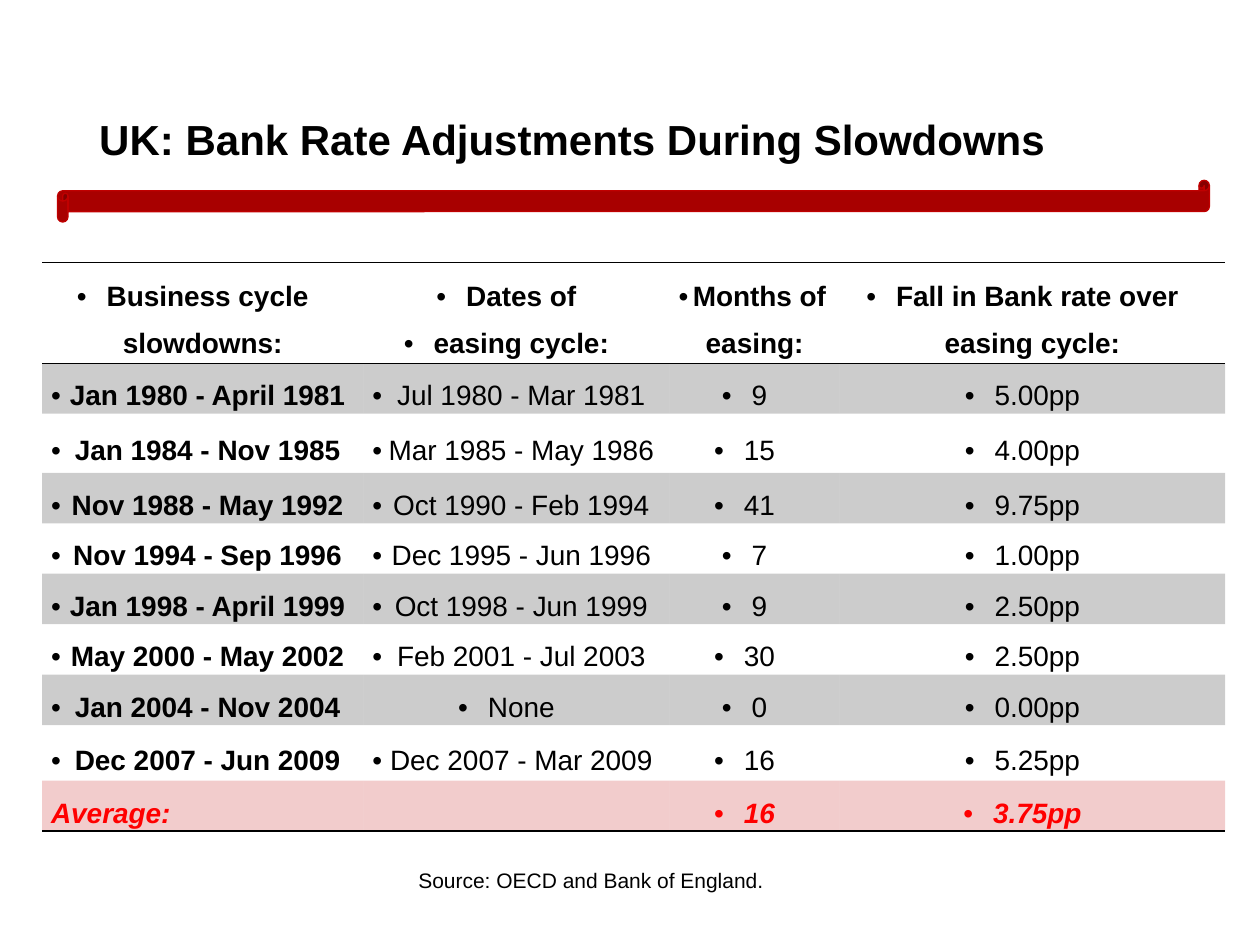
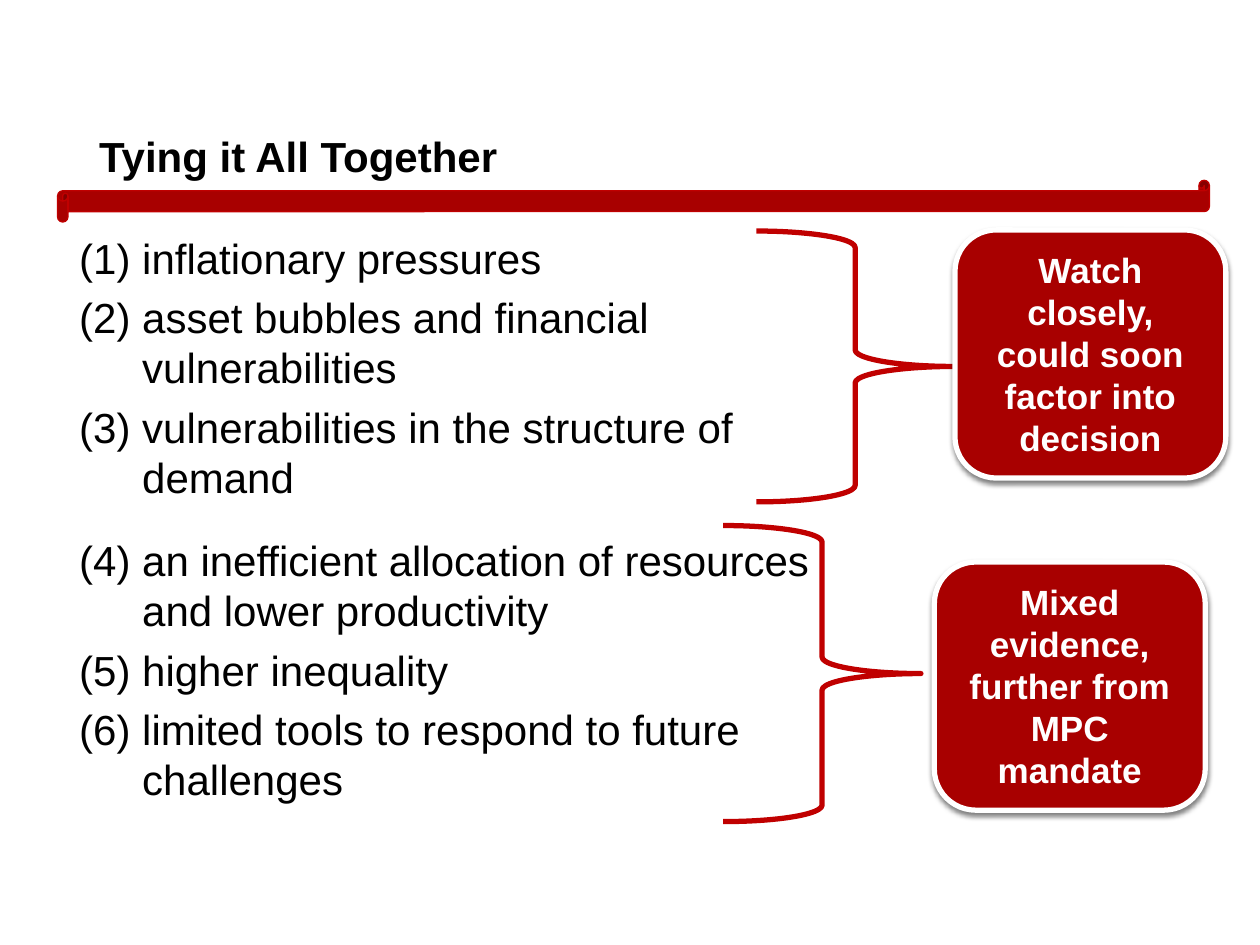
"""Build two slides on UK Bank Rate easing cycles and the policy outlook."""
import lxml.etree
import pptx
import pptx.dml.color
import pptx.enum.shapes
import pptx.enum.text
import pptx.oxml.ns
import pptx.util

Pt = pptx.util.Pt
Shape = pptx.enum.shapes.MSO_SHAPE
Anchor = pptx.enum.text.MSO_ANCHOR
Align = pptx.enum.text.PP_ALIGN

RATE_TITLE = "UK: Bank Rate Adjustments During Slowdowns"
RATE_SOURCE = "Source: OECD and Bank of England."
RATE_HEADER = ("Business cycle slowdowns:", "Dates of\neasing cycle:",
               "Months of easing:", "Fall in Bank rate over easing cycle:")
RATE_CYCLES = [
    ("Jan 1980 - April 1981", "Jul 1980 - Mar 1981", "9", "5.00pp"),
    ("Jan 1984 - Nov 1985", "Mar 1985 - May 1986", "15", "4.00pp"),
    ("Nov 1988 - May 1992", "Oct 1990 - Feb 1994", "41", "9.75pp"),
    ("Nov 1994 - Sep 1996", "Dec 1995 - Jun 1996", "7", "1.00pp"),
    ("Jan 1998 - April 1999", "Oct 1998 - Jun 1999", "9", "2.50pp"),
    ("May 2000 - May 2002", "Feb 2001 - Jul 2003", "30", "2.50pp"),
    ("Jan 2004 - Nov 2004", "None", "0", "0.00pp"),
    ("Dec 2007 - Jun 2009", "Dec 2007 - Mar 2009", "16", "5.25pp"),
]
RATE_AVERAGE = ("Average:", "", "16", "3.75pp")
COLUMN_WIDTHS = (183.6, 175, 97.2, 220.3)
ROW_HEIGHT = 28.85
TALLER_ROWS = {0: 57.7, 2: 33.8, 8: 31.8}

RISKS_TITLE = "Tying it All Together"
RISK_GROUPS = [
    ["inflationary pressures", "asset bubbles and financial vulnerabilities",
     "vulnerabilities in the structure of demand"],
    ["an inefficient allocation of resources and lower productivity",
     "higher inequality", "limited tools to respond to future challenges"],
]
BRACES = [(432.2, 132, 113, 154.8), (413.3, 300.3, 113, 169.2)]
VERDICTS = [
    ("Mixed evidence, further from MPC mandate", 533.9, 321.2),
    ("Watch closely, could soon factor into decision", 545.7, 131.4),
]
VERDICT_SIZE = (154.8, 141.8)

THEME = {
    "font": "Arial", "text": "000000", "light": "FFFFFF", "band": "A80000",
    "accent": "C00000", "average": "FF0000", "tint": 20,
    "title_size": 24, "body_size": 24, "verdict_size": 20,
    "table_size": 16, "source_size": 12,
}
PLAIN_TABLE_STYLE = "{2D5ABB26-0587-4C30-8999-92F81FD0307C}"


def color(name):
    return pptx.dml.color.RGBColor.from_string(THEME[name])


def add_element(parent, tag, **attributes):
    element = lxml.etree.SubElement(parent, pptx.oxml.ns.qn(tag))
    for key, value in attributes.items():
        element.set(key, str(value))
    return element


def write_text(frame, text, size, ink="text", bold=False, italic=False,
               align=Align.LEFT, line_spacing=None, space_before=0,
               group_space=0, bullet=None, margin=0, indent=0):
    """Write paragraphs split at line breaks, with groups split at blank lines."""
    frame.word_wrap = True
    lines = [(line, group > 0 and index == 0)
             for group, block in enumerate(text.split("\n\n"))
             for index, line in enumerate(block.split("\n"))]
    for position, (line, opens_group) in enumerate(lines):
        paragraph = frame.add_paragraph() if position else frame.paragraphs[0]
        properties = paragraph._p.get_or_add_pPr()
        properties.set("marL", str(Pt(margin)))
        properties.set("indent", str(Pt(indent)))
        if bullet == "number":
            add_element(properties, "a:buAutoNum", type="arabicParenBoth")
        elif bullet:
            add_element(properties, "a:buFont", typeface=THEME["font"])
            add_element(properties, "a:buChar", char=bullet)
        paragraph.alignment = align
        if line_spacing:
            paragraph.line_spacing = line_spacing
        if position:
            paragraph.space_before = Pt(group_space if opens_group else space_before)
        run = paragraph.add_run()
        run.text = line
        run.font.name = THEME["font"]
        run.font.size = Pt(THEME[size])
        run.font.bold = bold
        run.font.italic = italic
        run.font.color.rgb = color(ink)


def add_text(slide, place, text, size, anchor=Anchor.TOP, **text_format):
    box = slide.shapes.add_textbox(*map(Pt, place))
    box.text_frame.vertical_anchor = anchor
    write_text(box.text_frame, text, size, **text_format)


def add_shape(slide, kind, place, line, line_width, fill=None):
    shape = slide.shapes.add_shape(kind, *map(Pt, place))
    shape.shadow.inherit = False
    if fill:
        shape.fill.solid()
        shape.fill.fore_color.rgb = color(fill)
    else:
        shape.fill.background()
    shape.line.color.rgb = color(line)
    shape.line.width = Pt(line_width)
    return shape


def add_titled_slide(presentation, title, title_place):
    slide = presentation.slides.add_slide(presentation.slide_layouts[6])
    scroll = add_shape(slide, Shape.HORIZONTAL_SCROLL, (32.9, 103, 658.2, 23.9),
                       "accent", 0.75, "band")
    scroll.adjustments[0] = 0.25
    add_text(slide, title_place, title, "title_size", anchor=Anchor.MIDDLE, bold=True)
    return slide


def style_cell(cell, borders, tint):
    cell.margin_left = cell.margin_right = Pt(5.2)
    cell.margin_top = cell.margin_bottom = 0
    cell.vertical_anchor = Anchor.MIDDLE
    properties = cell._tc.get_or_add_tcPr()
    for side in borders:
        border = add_element(properties, f"a:ln{side}", w=Pt(1))
        add_element(add_element(border, "a:solidFill"), "a:srgbClr", val=THEME["text"])
    if tint:
        cell.fill.solid()
        cell.fill.fore_color.rgb = color(tint)
        fill = properties.find(pptx.oxml.ns.qn("a:solidFill"))
        add_element(fill[0], "a:alpha", val=THEME["tint"] * 1000)
    else:
        cell.fill.background()


def add_rate_table(slide):
    rows = [RATE_HEADER, *RATE_CYCLES, RATE_AVERAGE]
    last = len(rows) - 1
    heights = [TALLER_ROWS.get(index, ROW_HEIGHT) for index in range(len(rows))]
    frame = slide.shapes.add_table(len(rows), len(COLUMN_WIDTHS), Pt(24), Pt(149.9),
                                   Pt(sum(COLUMN_WIDTHS)), Pt(sum(heights)))
    table = frame.table
    table.first_row = table.horz_banding = False
    table._tbl.tblPr.find(pptx.oxml.ns.qn("a:tableStyleId")).text = PLAIN_TABLE_STYLE
    for column, width in zip(table.columns, COLUMN_WIDTHS):
        column.width = Pt(width)
    for row_index, values in enumerate(rows):
        table.rows[row_index].height = Pt(heights[row_index])
        is_header, is_average = row_index == 0, row_index == last
        borders = "TB" if is_header else "B" if is_average else ""
        tint = "accent" if is_average else "text" if row_index % 2 else None
        for column_index, value in enumerate(values):
            cell = table.cell(row_index, column_index)
            style_cell(cell, borders, tint)
            if not value:
                continue
            is_label = is_average and column_index == 0
            write_text(cell.text_frame, value, "table_size",
                       ink="average" if is_average else "text",
                       bold=is_header or is_average or column_index == 0,
                       italic=is_average, line_spacing=1.5,
                       align=Align.LEFT if is_label else Align.CENTER,
                       bullet=None if is_label else "•",
                       indent=0 if is_label else -17)


def add_verdict(slide, text, left, top):
    box = add_shape(slide, Shape.ROUNDED_RECTANGLE, (left, top, *VERDICT_SIZE),
                    "light", 3, "band")
    effects = box._element.spPr.find(pptx.oxml.ns.qn("a:effectLst"))
    shadow = add_element(effects, "a:outerShdw", blurRad=Pt(3), dist=Pt(2),
                         dir=90 * 60000, rotWithShape=0)
    shade = add_element(shadow, "a:srgbClr", val=THEME["text"])
    add_element(shade, "a:alpha", val=50000)
    box.text_frame.vertical_anchor = Anchor.TOP
    write_text(box.text_frame, text, "verdict_size", ink="light", bold=True,
               align=Align.CENTER)


def build_rates_slide(presentation):
    slide = add_titled_slide(presentation, RATE_TITLE, (49.6, 49.7, 610.6, 59))
    add_text(slide, (232, 492.1, 275.8, 21.6), RATE_SOURCE, "source_size")
    add_rate_table(slide)


def build_risks_slide(presentation):
    slide = add_titled_slide(presentation, RISKS_TITLE, (49.6, 69.1, 620, 39.6))
    risks = "\n\n".join("\n".join(group) for group in RISK_GROUPS)
    add_text(slide, (38.2, 129.3, 450.7, 342), risks, "body_size", bullet="number",
             margin=36, indent=-36, space_before=4.95, group_space=18.7)
    for place in BRACES:
        add_shape(slide, Shape.RIGHT_BRACE, place, "accent", 3)
    for verdict in VERDICTS:
        add_verdict(slide, *verdict)


def main():
    presentation = pptx.Presentation()
    presentation.slide_width, presentation.slide_height = Pt(720), Pt(540)
    build_rates_slide(presentation)
    build_risks_slide(presentation)
    presentation.save("out.pptx")


if __name__ == "__main__":
    main()
